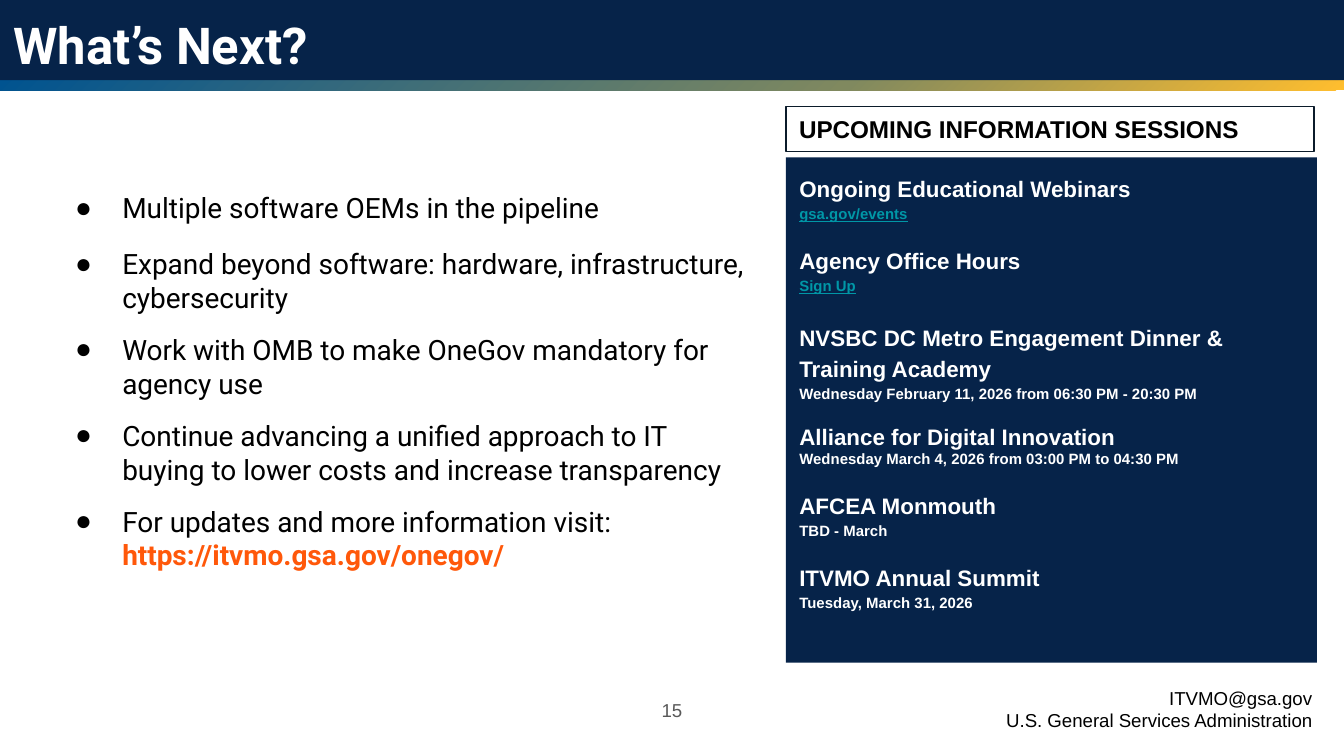
import dataclasses

import lxml.etree
import pptx
import pptx.dml.color
import pptx.enum.shapes
import pptx.enum.text
import pptx.oxml.ns
import pptx.util

Pt = pptx.util.Pt
Align = pptx.enum.text.PP_ALIGN
Anchor = pptx.enum.text.MSO_ANCHOR
qn = pptx.oxml.ns.qn


@dataclasses.dataclass(frozen=True)
class Theme:
    head: str = "Roboto"
    plain: str = "Arial"
    navy: str = "062349"
    edge: str = "0B1B2A"
    white: str = "FFFFFF"
    black: str = "000000"
    gray: str = "595959"
    teal: str = "0097A7"
    orange: str = "FF580A"
    fade: tuple = ((0, "005390"), (63, "80895F"), (100, "FFBE2E"))
    title: float = 27.2
    body: float = 15
    label: float = 13
    event: float = 12
    small: float = 10
    detail: float = 8


THEME = Theme()


def paint(text):
    return pptx.dml.color.RGBColor.from_string(text)


def write(para, text, font=THEME.plain, size=THEME.small, color=THEME.black,
          bold=False, line=False):
    run = para.add_run()
    run.text = text
    run.font.name = font
    run.font.size = Pt(size)
    run.font.color.rgb = paint(color)
    run.font.bold = bold
    run.font.underline = line


def mark(para, sign=None, left=0, hang=0):
    """Set the bullet and its indent; no sign means no bullet."""
    props = para._p.get_or_add_pPr()
    props.set("marL", str(Pt(left)))
    props.set("indent", str(-Pt(hang)))
    if sign:
        tint = lxml.etree.SubElement(props, qn("a:buClr"))
        lxml.etree.SubElement(tint, qn("a:srgbClr"), val=THEME.black)
        lxml.etree.SubElement(props, qn("a:buChar"), char=sign)
    else:
        lxml.etree.SubElement(props, qn("a:buNone"))


class Deck:
    """Holds the theme and the current slide, and adds each kind of element."""

    def __init__(self, theme):
        self.theme = theme
        self.show = pptx.Presentation()
        self.show.slide_width, self.show.slide_height = Pt(720), Pt(405)
        self.slide = self.show.slides.add_slide(self.show.slide_layouts[3])

    def frame(self, shape, anchor=Anchor.TOP):
        frame = shape.text_frame
        frame.word_wrap = True
        frame.auto_size = pptx.enum.text.MSO_AUTO_SIZE.NONE
        frame.vertical_anchor = anchor
        frame.margin_left = frame.margin_right = Pt(7.2)
        frame.margin_top = frame.margin_bottom = Pt(7.2)
        return frame

    def paras(self, frame, count):
        """Return count paragraphs of an empty frame, without extra space."""
        for _ in range(count - 1):
            frame.add_paragraph()
        for para in frame.paragraphs:
            para.space_before = para.space_after = Pt(0)
            para.alignment = Align.LEFT
        return frame.paragraphs

    def holder(self, index, box):
        shape = self.slide.placeholders[index]
        shape.left, shape.top, shape.width, shape.height = map(Pt, box)
        return shape

    def rect(self, box, fill=None, edge=None):
        kind = pptx.enum.shapes.MSO_SHAPE.RECTANGLE
        shape = self.slide.shapes.add_shape(kind, *map(Pt, box))
        shape.shadow.inherit = False
        if fill:
            shape.fill.solid()
            shape.fill.fore_color.rgb = paint(fill)
        else:
            shape.fill.background()
        if edge:
            shape.line.color.rgb = paint(edge)
            shape.line.width = Pt(0.75)
        else:
            shape.line.fill.background()
        return shape

    def blend(self, box):
        """Add a bar whose colours spread from its top left corner."""
        shape = self.rect(box)
        shape.fill.gradient()
        grad = shape._element.spPr.find(qn("a:gradFill"))
        for child in list(grad):
            grad.remove(child)
        stops = lxml.etree.SubElement(grad, qn("a:gsLst"))
        for place, color in self.theme.fade:
            stop = lxml.etree.SubElement(stops, qn("a:gs"), pos=str(place * 1000))
            lxml.etree.SubElement(stop, qn("a:srgbClr"), val=color)
        way = lxml.etree.SubElement(grad, qn("a:path"), path="circle")
        lxml.etree.SubElement(way, qn("a:fillToRect"), r="100000", b="100000")

    def title(self, box, text):
        shape = self.holder(0, box)
        para, = self.paras(self.frame(shape), 1)
        write(para, text, font=self.theme.head, size=self.theme.title,
              color=self.theme.white, bold=True)
        self.slide.shapes._spTree.append(shape._element)

    def points(self, box, items, link):
        """Fill the list; each item is (space before, text)."""
        look = {"font": self.theme.head, "size": self.theme.body}
        paras = self.paras(self.frame(self.holder(1, box)), len(items))
        for para, (gap, text) in zip(paras, items):
            mark(para, "●", left=36, hang=25.2)
            para.space_before = Pt(gap)
            write(para, text, **look)
        write(paras[-1], link, color=self.theme.orange, bold=True, **look)

    def events(self, box, items):
        """Fill the panel; each item is (gap, spacing, name, detail, is link)."""
        theme = self.theme
        shape = self.holder(2, box)
        shape.fill.solid()
        shape.fill.fore_color.rgb = paint(theme.navy)
        paras = iter(self.paras(self.frame(shape), 2 * len(items)))
        for gap, pitch, name, detail, link in items:
            top, low = next(paras), next(paras)
            for para in (top, low):
                mark(para)
                para.line_spacing = pitch
            top.space_before = Pt(gap)
            write(top, name, size=theme.event, color=theme.white, bold=True)
            write(low, detail, size=theme.detail, bold=True, line=link,
                  color=theme.teal if link else theme.white)

    def label(self, box, text):
        shape = self.rect(box, edge=self.theme.edge)
        para, = self.paras(self.frame(shape, Anchor.MIDDLE), 1)
        write(para, text, size=self.theme.label, bold=True)

    def note(self, box, lines, align, anchor=Anchor.TOP, color=THEME.black):
        shape = self.slide.shapes.add_textbox(*map(Pt, box))
        paras = self.paras(self.frame(shape, anchor), len(lines))
        for para, text in zip(paras, lines):
            para.alignment = align
            write(para, text, color=color)


POINTS = [
    (0, "Multiple software OEMs in the pipeline"),
    (12, "Expand beyond software: hardware, infrastructure, cybersecurity"),
    (10, "Work with OMB to make OneGov mandatory for agency use"),
    (10, "Continue advancing a unified approach to IT buying to lower costs "
         "and increase transparency"),
    (10, "For updates and more information visit: "),
]
EVENTS = [
    (0, 1.15, "Ongoing Educational Webinars", "gsa.gov/events", True),
    (11, 1.15, "Agency Office Hours", "Sign Up", True),
    (14, 1.15, "NVSBC DC Metro Engagement Dinner & Training Academy",
     "Wednesday February 11, 2026 from 06:30 PM - 20:30 PM", False),
    (11, 1.0, "Alliance for Digital Innovation",
     "Wednesday March 4, 2026 from 03:00 PM to 04:30 PM", False),
    (11, 1.15, "AFCEA Monmouth", "TBD - March", False),
    (11, 1.15, "ITVMO Annual Summit", "Tuesday, March 31, 2026", False),
]


def main():
    deck = Deck(THEME)
    deck.blend((-0.7, 42.5, 720.7, 6))
    deck.rect((-0.7, -1.4, 720.7, 44.4), fill=THEME.navy)
    deck.title((0, 0, 551, 42), "What’s Next?")
    deck.points((22.3, 95, 384.5, 221), POINTS, "https://itvmo.gsa.gov/onegov/")
    deck.label((421, 57, 283, 24.3), "UPCOMING INFORMATION SESSIONS")
    deck.events((421, 84.3, 284.5, 270.7), EVENTS)
    deck.note((338.4, 365, 43.2, 31), ["15"], Align.CENTER, Anchor.MIDDLE,
              THEME.gray)
    deck.note((510.5, 360.7, 199.5, 39),
              ["ITVMO@gsa.gov", "U.S. General Services Administration"],
              Align.RIGHT)
    deck.show.save("out.pptx")


if __name__ == "__main__":
    main()
